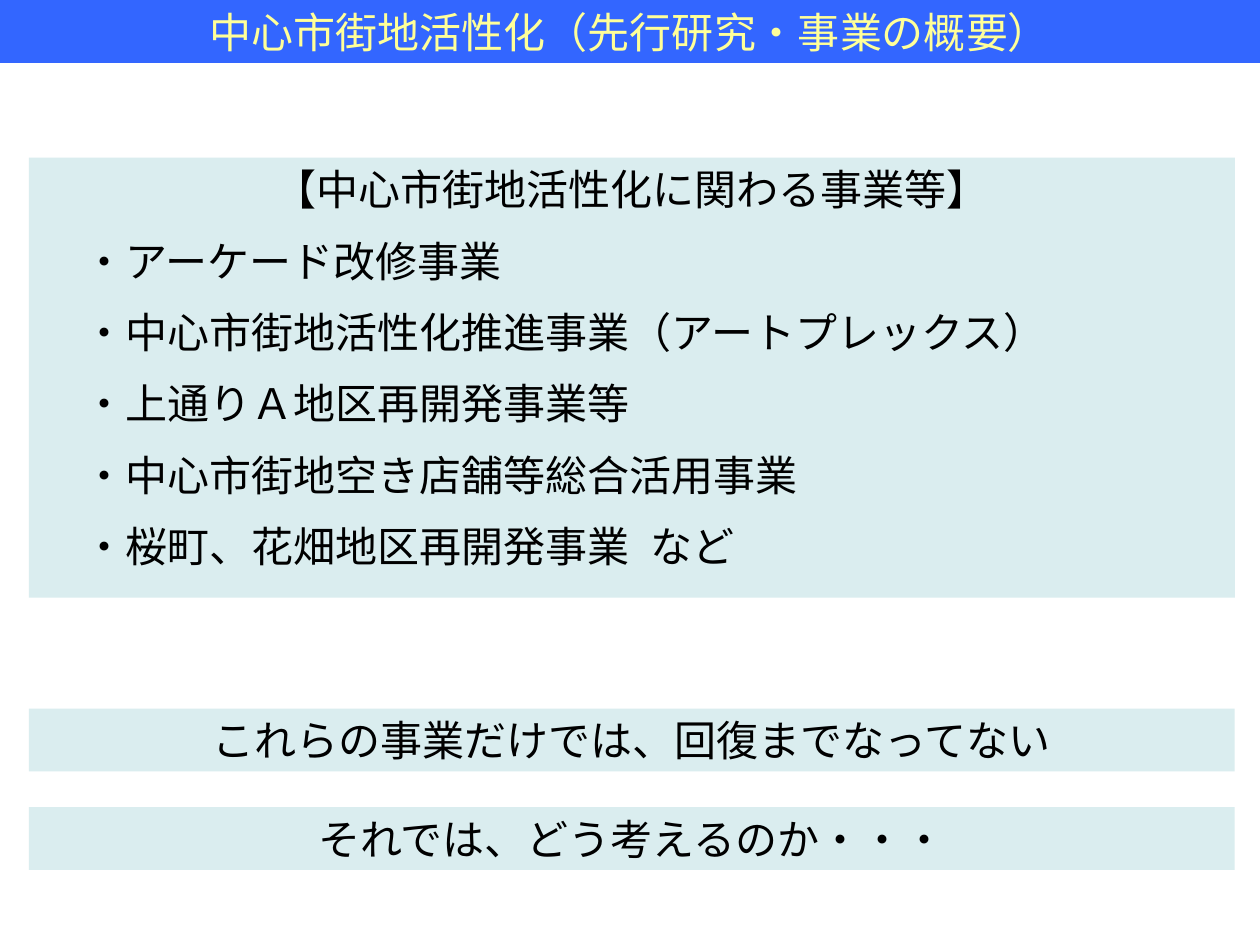
from lxml import etree
from pptx import Presentation
from pptx.dml.color import RGBColor
from pptx.enum.shapes import MSO_SHAPE
from pptx.enum.text import MSO_ANCHOR, MSO_AUTO_SIZE, PP_ALIGN
from pptx.oxml.ns import qn
from pptx.util import Pt

RECTANGLE = MSO_SHAPE.RECTANGLE
TOP = MSO_ANCHOR.TOP
NO_AUTOFIT = MSO_AUTO_SIZE.NONE
LEFT, CENTER = PP_ALIGN.LEFT, PP_ALIGN.CENTER

BLUE = RGBColor(0x33, 0x66, 0xFF)
YELLOW = RGBColor(0xFF, 0xFF, 0x99)
PALE_TEAL = RGBColor(0xDA, 0xED, 0xEF)
BLACK = RGBColor(0, 0, 0)

SLIDE_WIDTH, SLIDE_HEIGHT = 720, 540
BAND_LEFT, BAND_WIDTH = 16.56, 689.04
BAND_HEIGHT = 36

PROJECTS = [
    "・アーケード改修事業",
    "・中心市街地活性化推進事業（アートプレックス）",
    "・上通りＡ地区再開発事業等",
    "・中心市街地空き店舗等総合活用事業",
    "・桜町、花畑地区再開発事業\tなど",
]
STATEMENTS = [
    ("これらの事業だけでは、回復までなってない", 404.9),
    ("それでは、どう考えるのか・・・", 461.2),
]


def write(paragraph, text, font="Arial", size=24, color=BLACK, align=CENTER,
          before=0, indent=0, tab=None):
    """Write one unbulleted paragraph in the given format."""
    paragraph.alignment = align
    paragraph.space_before = Pt(before)
    props = paragraph._p.get_or_add_pPr()
    props.set("marL", str(Pt(indent)))
    props.set("indent", "0")
    etree.SubElement(props, qn("a:buNone"))
    if tab:
        stops = etree.SubElement(props, qn("a:tabLst"))
        etree.SubElement(stops, qn("a:tab"), pos=str(Pt(tab)), algn="l")
    run = paragraph.add_run()
    run.text = text
    run.font.name = font
    run.font.size = Pt(size)
    run.font.color.rgb = color
    east_asian = etree.SubElement(run._r.get_or_add_rPr(), qn("a:ea"))
    east_asian.set("typeface", font)


class SlideBuilder:
    def __init__(self, slide, band_fill=PALE_TEAL, line_gap=12, list_indent=24):
        self.slide = slide
        self.band_fill = band_fill
        self.line_gap = line_gap
        self.list_indent = list_indent

    def prepare(self, shape, left, top, width, height, fill):
        """Place and fill a shape, and return its text frame."""
        shape.left, shape.top = Pt(left), Pt(top)
        shape.width, shape.height = Pt(width), Pt(height)
        shape.fill.solid()
        shape.fill.fore_color.rgb = fill
        shape.line.fill.background()
        frame = shape.text_frame
        frame.word_wrap = True
        frame.auto_size = NO_AUTOFIT
        frame.vertical_anchor = TOP
        return frame

    def title(self, text):
        frame = self.prepare(self.slide.shapes.title, 0, 0, SLIDE_WIDTH,
                             BAND_HEIGHT, BLUE)
        write(frame.paragraphs[0], text, color=YELLOW)

    def project_list(self, heading, projects, top, height):
        frame = self.prepare(self.slide.placeholders[1], BAND_LEFT, top,
                             BAND_WIDTH, height, self.band_fill)
        write(frame.paragraphs[0], heading)
        for project in projects:
            write(frame.add_paragraph(), project, align=LEFT,
                  before=self.line_gap, indent=self.list_indent,
                  tab=345 if "\t" in project else None)

    def statement(self, text, top):
        bounds = (BAND_LEFT, top, BAND_WIDTH, BAND_HEIGHT)
        band = self.slide.shapes.add_shape(RECTANGLE, *map(Pt, bounds))
        band.shadow.inherit = False
        frame = self.prepare(band, *bounds, self.band_fill)
        write(frame.paragraphs[0], text)


def main():
    deck = Presentation()
    deck.slide_width, deck.slide_height = Pt(SLIDE_WIDTH), Pt(SLIDE_HEIGHT)
    builder = SlideBuilder(deck.slides.add_slide(deck.slide_layouts[1]))

    # Title bar
    builder.title("中心市街地活性化（先行研究・事業の概要）")

    # Projects under way
    builder.project_list("【中心市街地活性化に関わる事業等】", PROJECTS,
                         top=90, height=251.5)

    # Conclusion and question
    for text, top in STATEMENTS:
        builder.statement(text, top)

    deck.save("out.pptx")


if __name__ == "__main__":
    main()
